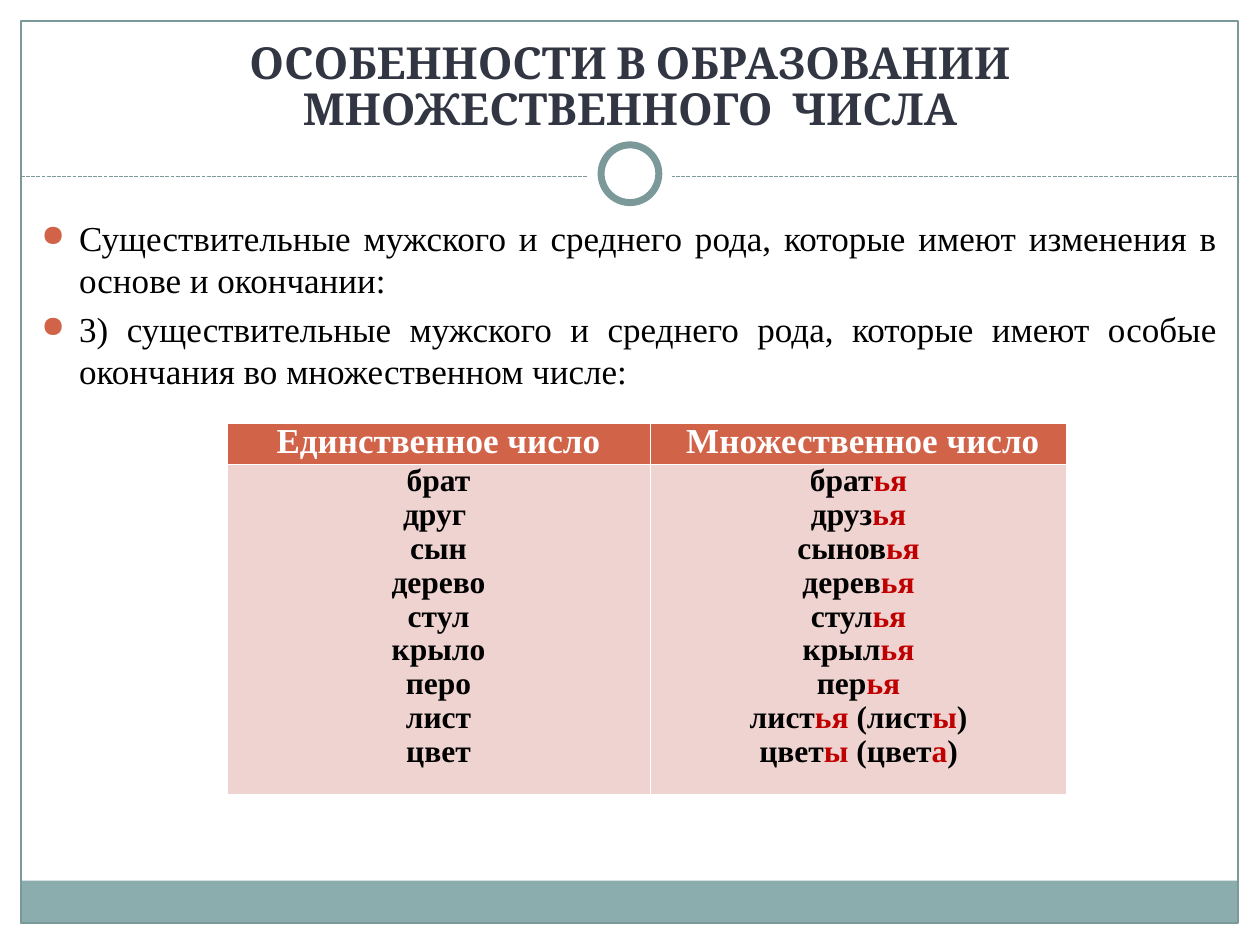
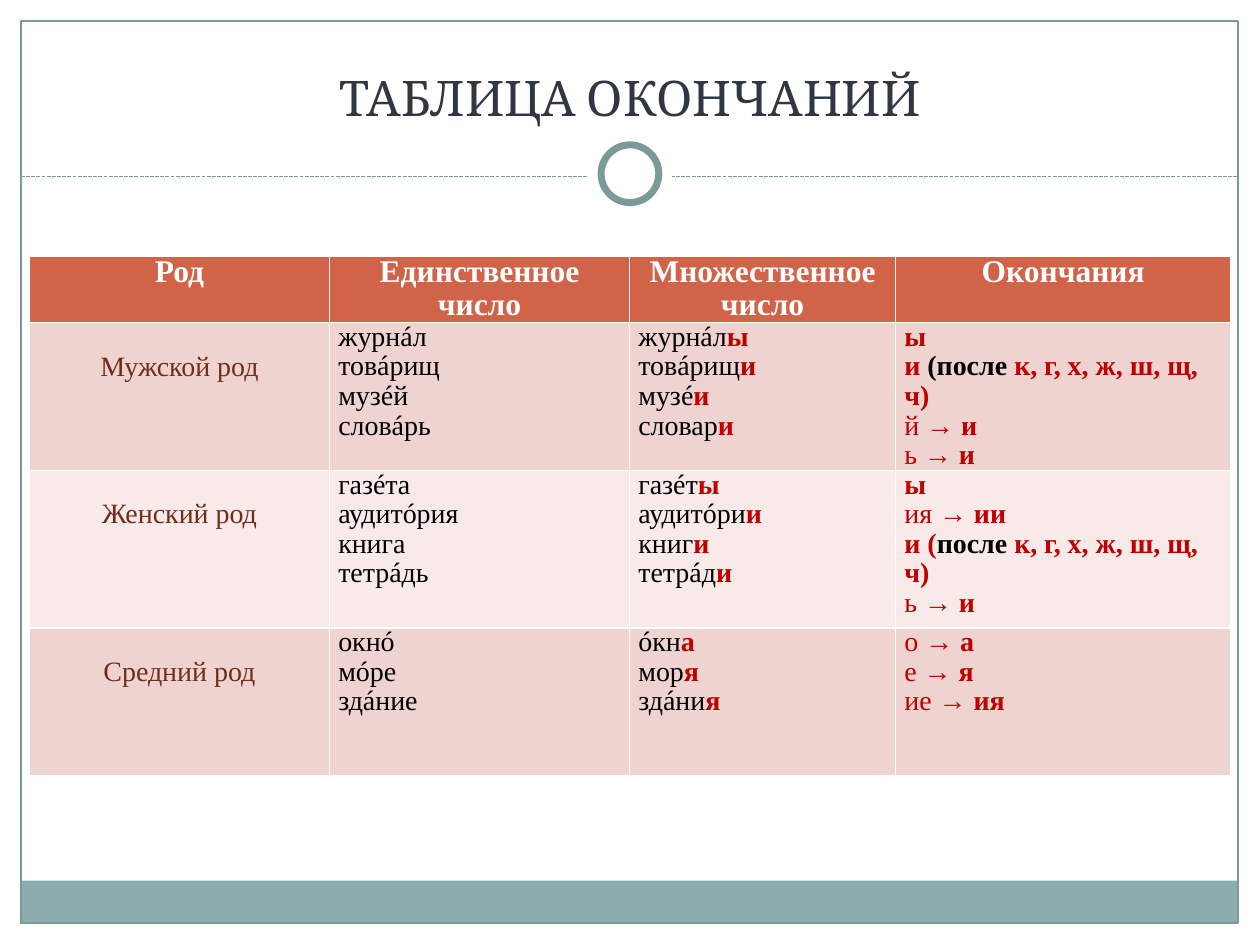
from itertools import cycle

from lxml import etree
from pptx import Presentation
from pptx.dml.color import RGBColor
from pptx.enum.dml import MSO_LINE_DASH_STYLE as Dash
from pptx.enum.shapes import MSO_CONNECTOR_TYPE as Connector, MSO_SHAPE as Shape
from pptx.enum.text import MSO_ANCHOR as Anchor, MSO_AUTO_SIZE as AutoSize, PP_ALIGN as Align
from pptx.oxml.ns import qn
from pptx.util import Pt

WHITE = RGBColor(0xFF, 0xFF, 0xFF)
BLACK = RGBColor(0x00, 0x00, 0x00)
RED = RGBColor(0xC0, 0x00, 0x00)
BROWN = RGBColor(0x71, 0x2D, 0x1C)
NAVY = RGBColor(0x32, 0x36, 0x43)
TEAL = RGBColor(0x7C, 0x99, 0x9A)
BAND = RGBColor(0x8C, 0xAD, 0xAE)
ORANGE = RGBColor(0xD1, 0x63, 0x49)
PINK = RGBColor(0xEE, 0xD3, 0xD0)
PALE = RGBColor(0xF7, 0xEA, 0xE9)
TITLE_FONT, TEXT_FONT = "Cambria", "Times New Roman"

# Colour and weight of the parts of a line, which "|" separates
HEADING = [(WHITE, True)]
GENDER = [(BROWN, False)]
PLAIN = [(BLACK, False)]
BOLD_WORD = [(BLACK, True), (RED, True)]
WORD = [(BLACK, False), (RED, True)]
ENDING = [(RED, False), (RED, True), (BLACK, True)]

deck = Presentation()
deck.slide_width, deck.slide_height = Pt(720), Pt(540)


def add_page(title_text, size, bold, height, bottom_inset):
    """Add a page with its title, band, frame, divider and ring."""
    page = deck.slides.add_slide(deck.slide_layouts[5])

    for kind, left, top, width, tall, fill, line, weight in (
        (Shape.RECTANGLE, 11.5, 503.3, 695.5, 24.5, BAND, None, 0),
        (Shape.RECTANGLE, 12, 12, 695.5, 515.5, None, TEAL, 0.75),
        (None, 12, 100.8, 695.5, 0, None, TEAL, 0.75),
        (Shape.OVAL, 336, 75.6, 48, 48, WHITE, None, 0),
        (Shape.OVAL, 343.5, 82.8, 33, 33, WHITE, TEAL, 4),
    ):
        if kind is None:
            item = page.shapes.add_connector(
                Connector.STRAIGHT, Pt(left), Pt(top), Pt(left + width), Pt(top))
            item.line.dash_style = Dash.SQUARE_DOT
            etree.SubElement(item.line._get_or_add_ln().getparent(), qn("a:effectLst"))
        else:
            item = page.shapes.add_shape(kind, Pt(left), Pt(top), Pt(width), Pt(tall))
            item.shadow.inherit = False
            if fill is None:
                item.fill.background()
            else:
                item.fill.solid()
                item.fill.fore_color.rgb = fill
        if line is None:
            item.line.fill.background()
        else:
            item.line.color.rgb = line
            item.line.width = Pt(weight)

    title = page.shapes.title
    title.left, title.top, title.width, title.height = Pt(24), Pt(18), Pt(672), Pt(height)
    frame = title.text_frame
    frame.text = title_text
    frame.word_wrap = True
    frame.auto_size = AutoSize.NONE
    frame.vertical_anchor = Anchor.BOTTOM
    frame.margin_top, frame.margin_bottom = 0, Pt(bottom_inset)
    para = frame.paragraphs[0]
    para.alignment = Align.CENTER
    para.line_spacing = 0.87
    para.font.name, para.font.size, para.font.bold = TITLE_FONT, Pt(size), bold
    para.font.color.rgb = NAVY
    return page


def add_word_table(page, left, top, widths, heights, rows, column_styles,
                   head_size, body_size, spacing, centred):
    """Add a table; each cell is a list of lines."""
    table = page.shapes.add_table(
        len(rows), len(widths), Pt(left), Pt(top), Pt(sum(widths)), Pt(sum(heights))).table
    for column, width in zip(table.columns, widths):
        column.width = Pt(width)
    for row_index, (row, height) in enumerate(zip(rows, heights)):
        table.rows[row_index].height = Pt(height)
        for column_index, lines in enumerate(row):
            cell = table.cell(row_index, column_index)
            styles = column_styles[column_index] if row_index else HEADING
            cell.fill.solid()
            cell.fill.fore_color.rgb = (PALE, PINK)[row_index % 2] if row_index else ORANGE
            cell.margin_left = cell.margin_right = Pt(5)
            cell.margin_top = Pt(17) if styles is GENDER else 0
            cell.margin_bottom = 0
            for line_index, line in enumerate(lines):
                frame = cell.text_frame
                para = frame.add_paragraph() if line_index else frame.paragraphs[0]
                in_middle = centred or row_index == 0 or styles is GENDER
                para.alignment = Align.CENTER if in_middle else Align.LEFT
                para.line_spacing = spacing
                para.font.name = TEXT_FONT
                para.font.size = Pt(body_size if row_index else head_size)
                for part, (color, bold) in zip(line.split("|"), cycle(styles)):
                    if part:
                        span = para.add_run()
                        span.text = part
                        span.font.bold = bold
                        span.font.color.rgb = color


# Page 1: special plural forms
page = add_page("ОСОБЕННОСТИ В ОБРАЗОВАНИИ МНОЖЕСТВЕННОГО  ЧИСЛА", 25.2, True, 60, 1)

box = page.shapes.add_textbox(Pt(16.5), Pt(120), Pt(686), Pt(360))
box.text_frame.word_wrap = True
rules = [
    "Существительные мужского и среднего рода, которые имеют изменения в основе и окончании:",
    "3) существительные мужского и среднего рода, которые имеют особые окончания "
    "во множественном числе:",
]
for index, rule in enumerate(rules):
    para = box.text_frame.add_paragraph() if index else box.text_frame.paragraphs[0]
    para.text = rule
    para.alignment = Align.JUSTIFY
    para.line_spacing = Pt(24)
    if index:
        para.space_before = Pt(4)
    props = para._p.get_or_add_pPr()
    props.set("marL", str(Pt(21.6)))
    props.set("indent", str(Pt(-21.6)))
    bullet_color = etree.SubElement(props, qn("a:buClr"))
    etree.SubElement(bullet_color, qn("a:srgbClr"), val=str(ORANGE))
    etree.SubElement(props, qn("a:buSzPct"), val="85000")
    etree.SubElement(props, qn("a:buChar"), char="●")
    para.font.name, para.font.size = TEXT_FONT, Pt(20)
    para.font.color.rgb = BLACK

special_rows = [
    [["Единственное число"], [" Множественное число"]],
    [
        ["брат", "друг ", "сын", "дерево", "стул", "крыло", "перо", "лист", "цвет"],
        ["брат|ья", "друз|ья", "сынов|ья", "дерев|ья", "стул|ья", "крыл|ья", "пер|ья",
         "лист|ья| (лист|ы|)", "цвет|ы| (цвет|а|)"],
    ],
]
add_word_table(page, 129.6, 242, [242, 238], [23.5, 178.5], special_rows,
               [BOLD_WORD, BOLD_WORD], 20, 18, 0.97, True)

# Page 2: endings by gender
page = add_page("ТАБЛИЦА ОКОНЧАНИЙ", 28, False, 88.5, 34)

ending_rows = [
    [["Род"], ["Единственное число"], ["Множественное число"], ["Окончания"]],
    [
        ["Мужской род"],
        ["журнáл", "товáрищ", "музéй", "словáрь"],
        ["журнáл|ы", "товáрищ|и", "музé|и", "словар|и"],
        ["|ы", "|и |(после ||к, г, х, ж, ш, щ, ч)", "й| → и", "ь| → и"],
    ],
    [
        ["Женский род"],
        ["газéта", "аудитóрия", "книга", "тетрáдь"],
        ["газéт|ы", "аудитóри|и", "книг|и", "тетрáд|и"],
        ["|ы", "ия| → ии", "|и (|после ||к, г, х, ж, ш, щ, ч)", "ь| → и"],
    ],
    [
        ["Средний род"],
        ["окнó", "мóре", "здáние"],
        ["óкн|а", "мор|я", "здáни|я"],
        ["о| → а", "е| → я", "ие| → ия"],
    ],
]
add_word_table(page, 16.8, 146.5, [171.5, 171.5, 152, 191.5], [37, 84.5, 90, 84.5],
               ending_rows, [GENDER, PLAIN, WORD, ENDING], 18, 16, 0.95, False)

deck.save("out.pptx")
